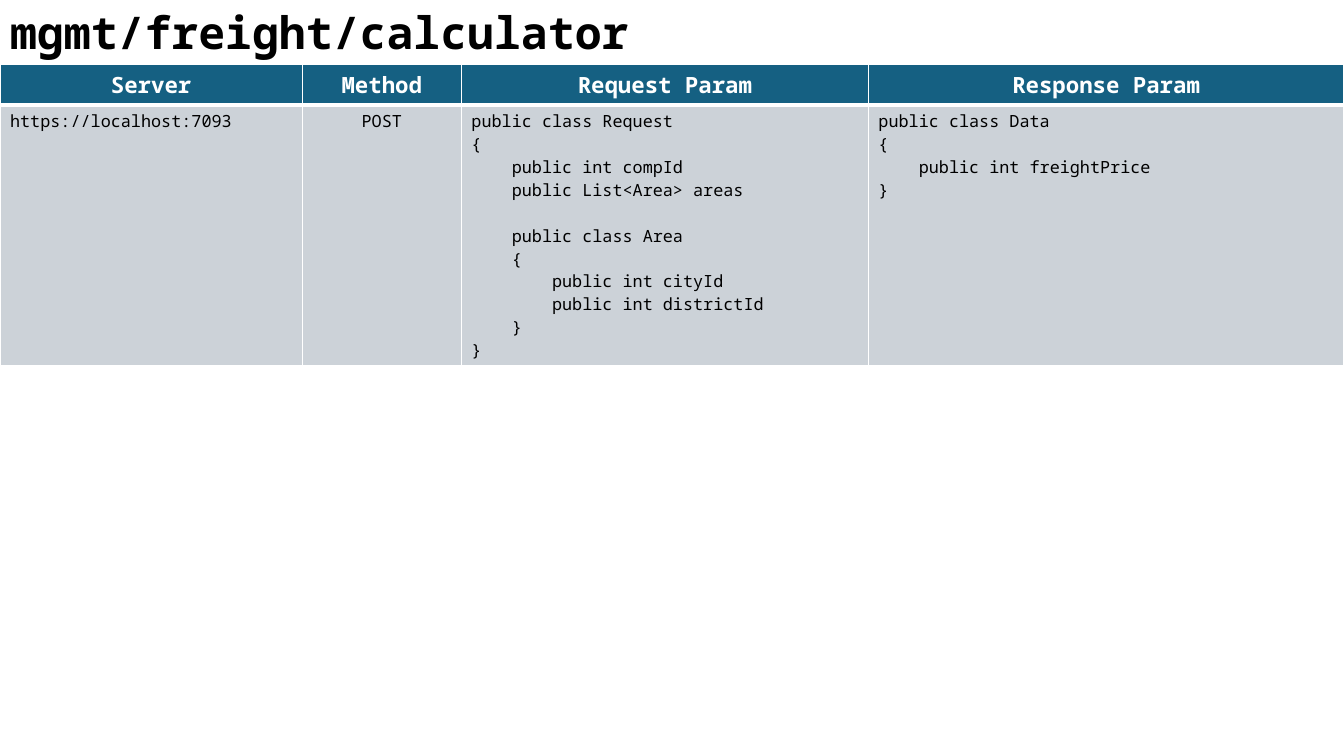
import dataclasses
import lxml.etree
import pptx
import pptx.dml.color
import pptx.enum.text
import pptx.oxml.ns
import pptx.slide
import pptx.table
import pptx.text.text
import pptx.util

Align = pptx.enum.text.PP_ALIGN


@dataclasses.dataclass(frozen=True)
class Theme:
    font: str = "Noto Sans Mono"
    white: str = "FFFFFF"
    black: str = "000000"
    head: str = "156082"
    body: str = "CCD2D8"
    title: int = 32
    label: int = 16
    code: int = 12
    thin: int = 1
    thick: int = 3


@dataclasses.dataclass(frozen=True)
class Column:
    label: str
    code: str
    share: float
    align: Align = Align.LEFT


@dataclasses.dataclass(frozen=True)
class Style:
    fill: str
    ink: str
    size: int
    bold: bool
    top: int
    base: int


THEME = Theme()
HEAD = Style(THEME.head, THEME.white, THEME.label, True, THEME.thin, THEME.thick)
BODY = Style(THEME.body, THEME.black, THEME.code, False, THEME.thick, THEME.thin)

REQUEST = """public class Request
{
    public int compId
    public List<Area> areas

    public class Area
    {
        public int cityId
        public int districtId
    }
}"""
RESPONSE = """public class Data
{
    public int freightPrice
}"""

COLUMNS = [
    Column("Server", "https://localhost:7093", 3),
    Column("Method", "POST", 1.58, Align.CENTER),
    Column("Request Param", REQUEST, 4.04),
    Column("Response Param", RESPONSE, 4.72),
]
TOTAL = sum(col.share for col in COLUMNS)
WIDTH = pptx.util.Inches(13.33)
HEIGHT = pptx.util.Inches(7.5)
TOP = round(HEIGHT * 0.64 / 7.5)
ROWS = [round(HEIGHT * 0.4 / 7.5), round(HEIGHT * 2.59 / 7.5)]


def tag(name: str) -> str:
    return pptx.oxml.ns.qn(f"a:{name}")


def format_text(frame: pptx.text.text.TextFrame, size: int, ink: str,
                bold: bool, align: Align) -> None:
    for para in frame.paragraphs:
        para.alignment = align
        for run in para.runs:
            run.font.name = THEME.font
            run.font.size = pptx.util.Pt(size)
            run.font.bold = bold
            run.font.color.rgb = pptx.dml.color.RGBColor.from_string(ink)
        if not para.runs:
            end = lxml.etree.SubElement(para._p, tag("endParaRPr"), sz=str(size * 100))
            lxml.etree.SubElement(end, tag("latin"), typeface=THEME.font)


def add_edges(cell: pptx.table._Cell, style: Style) -> None:
    props = cell._tc.get_or_add_tcPr()
    sizes = {"lnL": THEME.thin, "lnR": THEME.thin, "lnT": style.top, "lnB": style.base}
    for spot, (name, size) in enumerate(sizes.items()):
        line = lxml.etree.Element(tag(name), w=str(pptx.util.Pt(size)))
        fill = lxml.etree.SubElement(line, tag("solidFill"))
        lxml.etree.SubElement(fill, tag("srgbClr"), val=THEME.white)
        props.insert(spot, line)


def fill_cell(cell: pptx.table._Cell, text: str, style: Style, align: Align) -> None:
    cell.fill.solid()
    cell.fill.fore_color.rgb = pptx.dml.color.RGBColor.from_string(style.fill)
    add_edges(cell, style)
    cell.text_frame.text = text
    format_text(cell.text_frame, style.size, style.ink, style.bold, align)


def add_title(slide: pptx.slide.Slide, text: str) -> None:
    title = slide.shapes.title
    title.left, title.top = 0, 0
    title.width, title.height = round(WIDTH * 0.48), TOP
    frame = title.text_frame
    frame.text = text
    frame.word_wrap = False
    frame.auto_size = pptx.enum.text.MSO_AUTO_SIZE.SHAPE_TO_FIT_TEXT
    frame.vertical_anchor = pptx.enum.text.MSO_ANCHOR.TOP
    frame.paragraphs[0].line_spacing = 1.0
    format_text(frame, THEME.title, THEME.black, True, Align.LEFT)


def add_grid(slide: pptx.slide.Slide) -> None:
    grid = slide.shapes.add_table(len(ROWS), len(COLUMNS), 0, TOP, WIDTH, sum(ROWS)).table
    for row, height in zip(grid.rows, ROWS):
        row.height = height
    for spot, col in enumerate(COLUMNS):
        grid.columns[spot].width = round(WIDTH * col.share / TOTAL)
        fill_cell(grid.cell(0, spot), col.label, HEAD, Align.CENTER)
        fill_cell(grid.cell(1, spot), col.code, BODY, col.align)


def main() -> None:
    deck = pptx.Presentation()
    deck.slide_width, deck.slide_height = WIDTH, HEIGHT
    slide = deck.slides.add_slide(deck.slide_layouts.get_by_name("Title Only"))
    add_title(slide, "mgmt/freight/calculator")
    add_grid(slide)
    deck.save("out.pptx")


if __name__ == "__main__":
    main()
